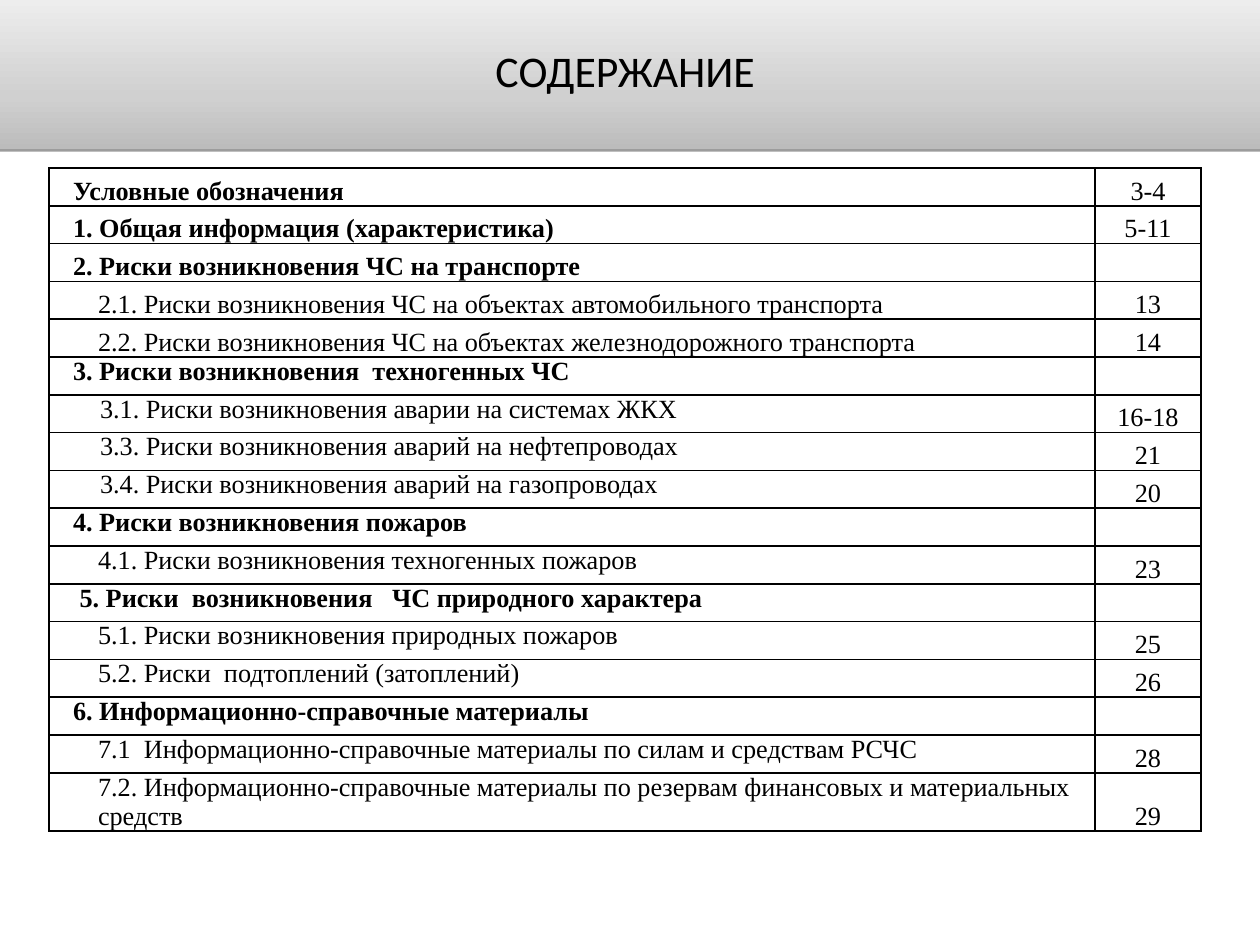
from copy import deepcopy
from dataclasses import dataclass

from lxml.etree import SubElement
from pptx import Presentation
from pptx.dml.color import RGBColor
from pptx.enum.shapes import MSO_SHAPE
from pptx.enum.text import MSO_ANCHOR, PP_ALIGN
from pptx.oxml.ns import qn
from pptx.util import Pt

PX = 914400 / 126


@dataclass(frozen=True)
class Theme:
    """Colours, fonts and type sizes of the slide."""
    ink: str = "000000"
    paper: str = "FFFFFF"
    band: tuple = ((0, "BCBCBC"), (0.35, "D0D0D0"), (1, "EDEDED"))
    title_font: str = "Calibri"
    body_font: str = "Times New Roman"
    title_size: int = 25
    body_size: int = 15


THEME = Theme()
HEADING, ITEM, DEEP_ITEM = 24, 49, 51
ENTRIES = [
    ("Условные обозначения", "3-4", HEADING),
    ("1. Общая информация (характеристика)", "5-11", HEADING),
    ("2. Риски возникновения ЧС на транспорте", "", HEADING),
    ("2.1. Риски возникновения ЧС на объектах автомобильного транспорта", "13", ITEM),
    ("2.2. Риски возникновения ЧС на объектах железнодорожного транспорта", "14", ITEM),
    ("3. Риски возникновения  техногенных ЧС", "", HEADING),
    ("3.1. Риски возникновения аварии на системах ЖКХ", "16-18", DEEP_ITEM),
    ("3.3. Риски возникновения аварий на нефтепроводах", "21", DEEP_ITEM),
    ("3.4. Риски возникновения аварий на газопроводах", "20", DEEP_ITEM),
    ("4. Риски возникновения пожаров", "", HEADING),
    ("4.1. Риски возникновения техногенных пожаров", "23", ITEM),
    (" 5. Риски  возникновения   ЧС природного характера", "", HEADING),
    ("5.1. Риски возникновения природных пожаров", "25", ITEM),
    ("5.2. Риски  подтоплений (затоплений)", "26", ITEM),
    ("6. Информационно-справочные материалы", "", HEADING),
    ("7.1  Информационно-справочные материалы по силам и средствам РСЧС", "28", ITEM),
    ("7.2. Информационно-справочные материалы по резервам финансовых и материальных средств",
     "29", ITEM),
]
BOTTOM_ANCHORED_ENTRIES = 5


def px(length):
    """Turn px into EMU."""
    return round(length * PX)


def write(paragraph, text, font_name, size, bold=False):
    """Put text in a paragraph and set its font."""
    paragraph.text = text
    font = paragraph.font
    font.name, font.size, font.bold = font_name, Pt(size), bold
    font.color.rgb = RGBColor.from_string(THEME.ink)


def fill_gradient(shape, stops):
    """Fill a shape with a vertical gradient rising from the bottom."""
    shape.fill.gradient()
    shape.fill.gradient_angle = 90
    stop_list = shape._element.spPr.find(".//" + qn("a:gsLst"))
    for _ in stops[2:]:
        stop_list.append(deepcopy(stop_list[0]))
    for stop, (position, color) in zip(shape.fill.gradient_stops, stops):
        stop.position = position
        stop.color.rgb = RGBColor.from_string(color)


def add_drop_shadow(shape):
    """Give a shape a thin shadow below its lower edge."""
    shape.shadow.inherit = False
    effects = shape._element.spPr.find(qn("a:effectLst"))
    shadow = SubElement(effects, qn("a:outerShdw"), blurRad="0", dist=str(Pt(1.6)),
                        dir="5400000", rotWithShape="0")
    color = SubElement(shadow, qn("a:srgbClr"), val=THEME.ink)
    SubElement(color, qn("a:alpha"), val="38000")


def add_title_band(slide, left, top, width, height):
    """Draw the grey band with the slide title."""
    band = slide.shapes.add_shape(MSO_SHAPE.RECTANGLE, px(left), px(top), px(width), px(height))
    fill_gradient(band, THEME.band)
    band.line.fill.background()
    add_drop_shadow(band)
    band.text_frame.vertical_anchor = MSO_ANCHOR.MIDDLE
    paragraph = band.text_frame.paragraphs[0]
    paragraph.alignment = PP_ALIGN.CENTER
    paragraph.line_spacing = 0.8
    write(paragraph, "СОДЕРЖАНИЕ ", THEME.title_font, THEME.title_size)


def style_cell(cell, anchor):
    """Set the fill, borders, margins and anchor of a cell."""
    cell.margin_left = cell.margin_right = cell.margin_top = cell.margin_bottom = 0
    cell.vertical_anchor = anchor
    properties = cell._tc.get_or_add_tcPr()
    for side in ("lnL", "lnR", "lnT", "lnB"):
        border = SubElement(properties, qn("a:" + side), w=str(Pt(1)))
        SubElement(SubElement(border, qn("a:solidFill")), qn("a:srgbClr"), val=THEME.ink)
    cell.fill.solid()
    cell.fill.fore_color.rgb = RGBColor.from_string(THEME.paper)


def add_contents_table(slide, left, top, width, height):
    """Draw the table of contents with its page numbers."""
    page_width, last_height = 106, 57
    table = slide.shapes.add_table(len(ENTRIES), 2, px(left), px(top),
                                   px(width), px(height)).table
    table.first_row = table.horz_banding = False
    table.columns[0].width = px(width - page_width)
    table.columns[1].width = px(page_width)
    row_height = px((height - last_height) / (len(ENTRIES) - 1))
    for index, (title, pages, indent) in enumerate(ENTRIES):
        is_last = index == len(ENTRIES) - 1
        table.rows[index].height = px(last_height) if is_last else row_height
        title_cell, page_cell = table.cell(index, 0), table.cell(index, 1)
        at_bottom = index < BOTTOM_ANCHORED_ENTRIES
        style_cell(title_cell, MSO_ANCHOR.BOTTOM if at_bottom else MSO_ANCHOR.TOP)
        style_cell(page_cell, MSO_ANCHOR.BOTTOM)
        paragraph = title_cell.text_frame.paragraphs[0]
        write(paragraph, title, THEME.body_font, THEME.body_size, indent == HEADING)
        paragraph._p.get_or_add_pPr().set("marL", str(px(indent)))
        paragraph = page_cell.text_frame.paragraphs[0]
        write(paragraph, pages, THEME.body_font, THEME.body_size)
        paragraph.alignment = PP_ALIGN.CENTER


def main():
    """Build and save the contents slide."""
    presentation = Presentation()
    presentation.slide_width, presentation.slide_height = px(1260), px(945)
    slide = presentation.slides.add_slide(presentation.slide_layouts[6])
    add_title_band(slide, 0, 0, 1260, 149)
    add_contents_table(slide, 49, 168, 1152, 662)
    presentation.save("out.pptx")


if __name__ == "__main__":
    main()
